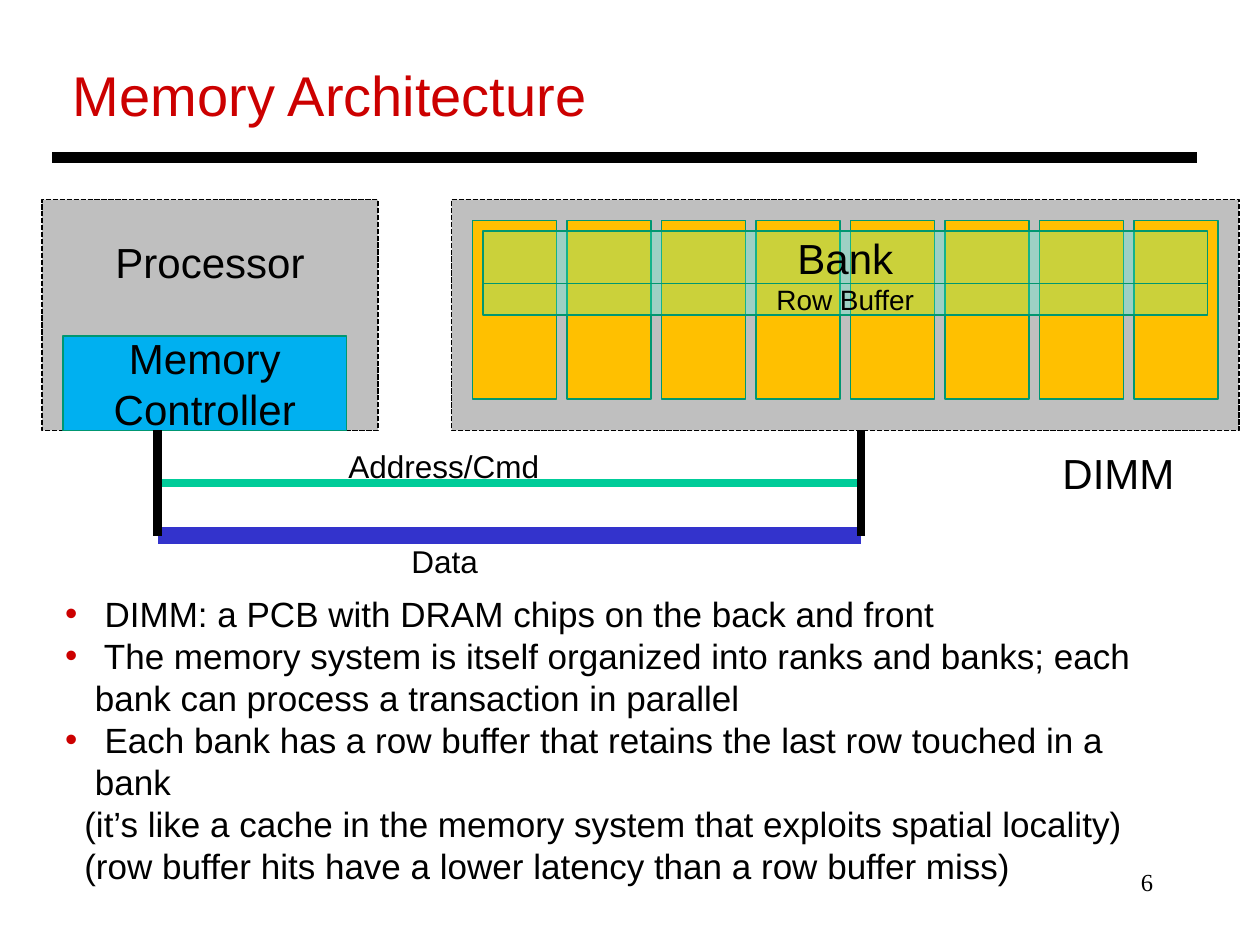
import pptx
import pptx.dml.color
import pptx.enum.dml
import pptx.enum.shapes
import pptx.enum.text
import pptx.oxml
import pptx.oxml.ns
import pptx.util
from dataclasses import dataclass
from typing import Optional

Pt = pptx.util.Pt
Align = pptx.enum.text.PP_ALIGN
Anchor = pptx.enum.text.MSO_ANCHOR
BLACK, RED, GREY, GREEN = "000000", "CC0000", "BFBFBF", "009771"


@dataclass
class Box:
    left: float
    top: float
    width: float
    height: float
    fill: str
    line: str = GREEN
    text: str = ""
    size: float = 24
    dash: bool = False
    alpha: Optional[int] = None
    inset: Optional[float] = None


@dataclass
class Wire:
    x1: float
    y1: float
    x2: float
    y2: float
    color: str
    width: float


@dataclass
class Label:
    left: float
    top: float
    width: float
    height: float
    text: str
    size: float
    font: str = "Arial"
    align: Align = Align.LEFT


@dataclass
class Point:
    text: str
    indent: float
    mark: bool = False


def paint(target, color: str) -> None:
    target.rgb = pptx.dml.color.RGBColor.from_string(color)


def node(parent, tag: str, **attrs: str):
    child = parent.makeelement(pptx.oxml.ns.qn(tag), attrs)
    parent.append(child)
    return child


def style(par, size: float, color: str = BLACK, font: str = "Arial", align: Align = Align.LEFT) -> None:
    par.alignment = align
    for run in par.runs:
        run.font.size = Pt(size)
        run.font.name = font
        paint(run.font.color, color)


def place(shape, left: float, top: float, width: float, height: float) -> None:
    shape.left, shape.top = Pt(left), Pt(top)
    shape.width, shape.height = Pt(width), Pt(height)


def draw_box(slide, box: Box) -> None:
    shape = slide.shapes.add_shape(
        pptx.enum.shapes.MSO_SHAPE.RECTANGLE,
        Pt(box.left), Pt(box.top), Pt(box.width), Pt(box.height))
    shape.shadow.inherit = False
    shape.fill.solid()
    paint(shape.fill.fore_color, box.fill)
    if box.alpha is not None:
        tint = shape.fill._xPr.find(".//" + pptx.oxml.ns.qn("a:srgbClr"))
        node(tint, "a:alpha", val=str(box.alpha * 1000))
    paint(shape.line.color, box.line)
    shape.line.width = Pt(1)
    if box.dash:
        shape.line.dash_style = pptx.enum.dml.MSO_LINE.SQUARE_DOT
        shape.line._ln.find(pptx.oxml.ns.qn("a:prstDash")).set("val", "sysDash")
    if box.text:
        frame = shape.text_frame
        frame.text = box.text
        frame.word_wrap = True
        frame.vertical_anchor = Anchor.MIDDLE
        if box.inset is not None:
            frame.vertical_anchor = Anchor.TOP
            frame.margin_top = Pt(box.inset)
        style(frame.paragraphs[0], box.size, align=Align.CENTER)


def draw_wire(slide, wire: Wire) -> None:
    line = slide.shapes.add_connector(
        pptx.enum.shapes.MSO_CONNECTOR.STRAIGHT,
        Pt(wire.x1), Pt(wire.y1), Pt(wire.x2), Pt(wire.y2))
    paint(line.line.color, wire.color)
    line.line.width = Pt(wire.width)
    node(line._element.spPr, "a:effectLst")


def draw_label(slide, label: Label) -> None:
    shape = slide.shapes.add_textbox(
        Pt(label.left), Pt(label.top), Pt(label.width), Pt(label.height))
    frame = shape.text_frame
    frame.text = label.text
    frame.word_wrap = label.align == Align.RIGHT
    style(frame.paragraphs[0], label.size, font=label.font, align=label.align)


def fill_title(shape, text: str) -> None:
    place(shape, 34.5, 31, 310, 46)
    frame = shape.text_frame
    frame.text = text
    frame.word_wrap = False
    frame.auto_size = pptx.enum.text.MSO_AUTO_SIZE.NONE
    frame.vertical_anchor = Anchor.MIDDLE
    style(frame.paragraphs[0], 32, RED)


def fill_body(shape, points: list[Point]) -> None:
    place(shape, 30, 335, 651, 176)
    frame = shape.text_frame
    frame.text = "\n".join(point.text for point in points)
    frame.word_wrap = True
    frame.auto_size = pptx.enum.text.MSO_AUTO_SIZE.NONE
    frame.vertical_anchor = Anchor.TOP
    for par, point in zip(frame.paragraphs, points):
        style(par, 20)
        par.line_spacing = Pt(24)
        par.space_before = par.space_after = Pt(0)
        props = par._p.get_or_add_pPr()
        props.set("marL", str(Pt(point.indent)))
        props.set("indent", str(-Pt(point.indent) if point.mark else 0))
        if point.mark:
            node(node(props, "a:buClr"), "a:srgbClr", val=RED)
            node(props, "a:buFont", typeface="Arial")
            node(props, "a:buChar", char="•")
        else:
            node(props, "a:buNone")


POINTS = [
    Point(" DIMM: a PCB with DRAM chips on the back and front", 17, True),
    Point(" The memory system is itself organized into ranks and banks; each", 17, True),
    Point("bank can process a transaction in parallel", 17),
    Point(" Each bank has a row buffer that retains the last row touched in a bank", 17, True),
    Point("(it’s like a cache in the memory system that exploits spatial locality)", 11),
    Point("(row buffer hits have a lower latency than a row buffer miss)", 11),
]
BOXES = [
    Box(24, 114, 192, 132, GREY, BLACK, "Processor", dash=True, inset=21),
    Box(36, 192, 162, 54, "00B0F0", text="Memory Controller"),
    Box(258, 114, 450, 132, GREY, BLACK, dash=True),
    *[Box(270 + 54 * i, 126, 48, 102, "FFC000") for i in range(8)],
    Box(276, 132, 414, 30, "47FFD1", text="Bank", alpha=28),
    Box(276, 162, 414, 18, "47FFD1", text="Row Buffer", size=16, alpha=28),
]
WIRES = [
    Wire(30, 90, 684, 90, BLACK, 6),
    Wire(90, 276, 492, 276, "00CC99", 5),
    Wire(90, 306, 492, 306, "3333CC", 10),
    *[Wire(x, 246, x, 306, BLACK, 5) for x in (90, 492)],
]
LABELS = [
    Label(192, 252, 125, 29, "Address/Cmd", 18),
    Label(228, 306, 53, 29, "Data", 18),
    Label(600, 252, 79, 37, "DIMM", 24),
    Label(516, 492, 150, 36, "6", 14, "Times New Roman", Align.RIGHT),
]


def main() -> None:
    deck = pptx.Presentation()
    deck.slide_width, deck.slide_height = Pt(720), Pt(540)
    slide = deck.slides.add_slide(deck.slide_layouts[1])
    fill_title(slide.shapes.title, "Memory Architecture")
    fill_body(slide.placeholders[1], POINTS)
    for box in BOXES:
        draw_box(slide, box)
    for wire in WIRES:
        draw_wire(slide, wire)
    for label in LABELS:
        draw_label(slide, label)
    deck.save("out.pptx")


if __name__ == "__main__":
    main()
